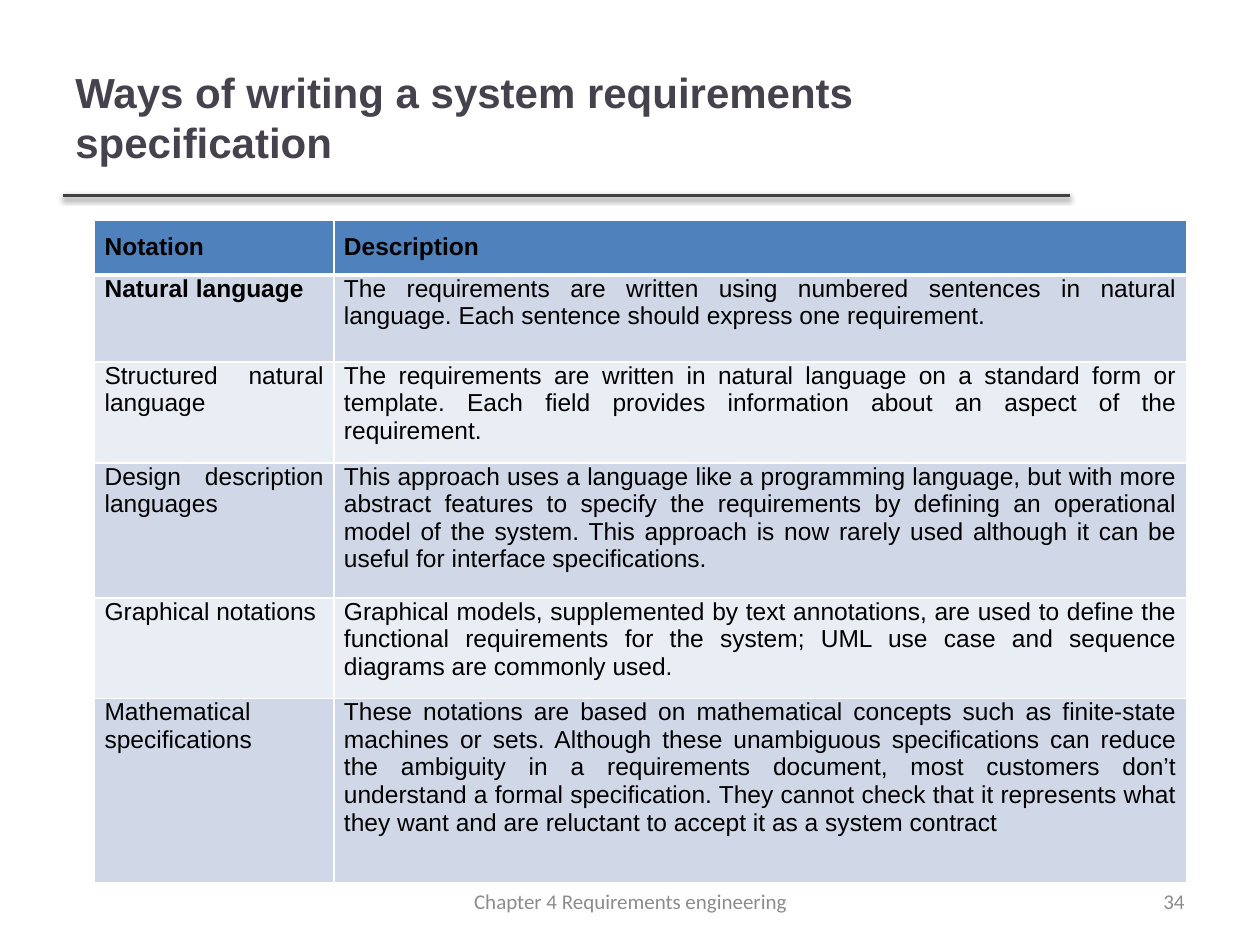
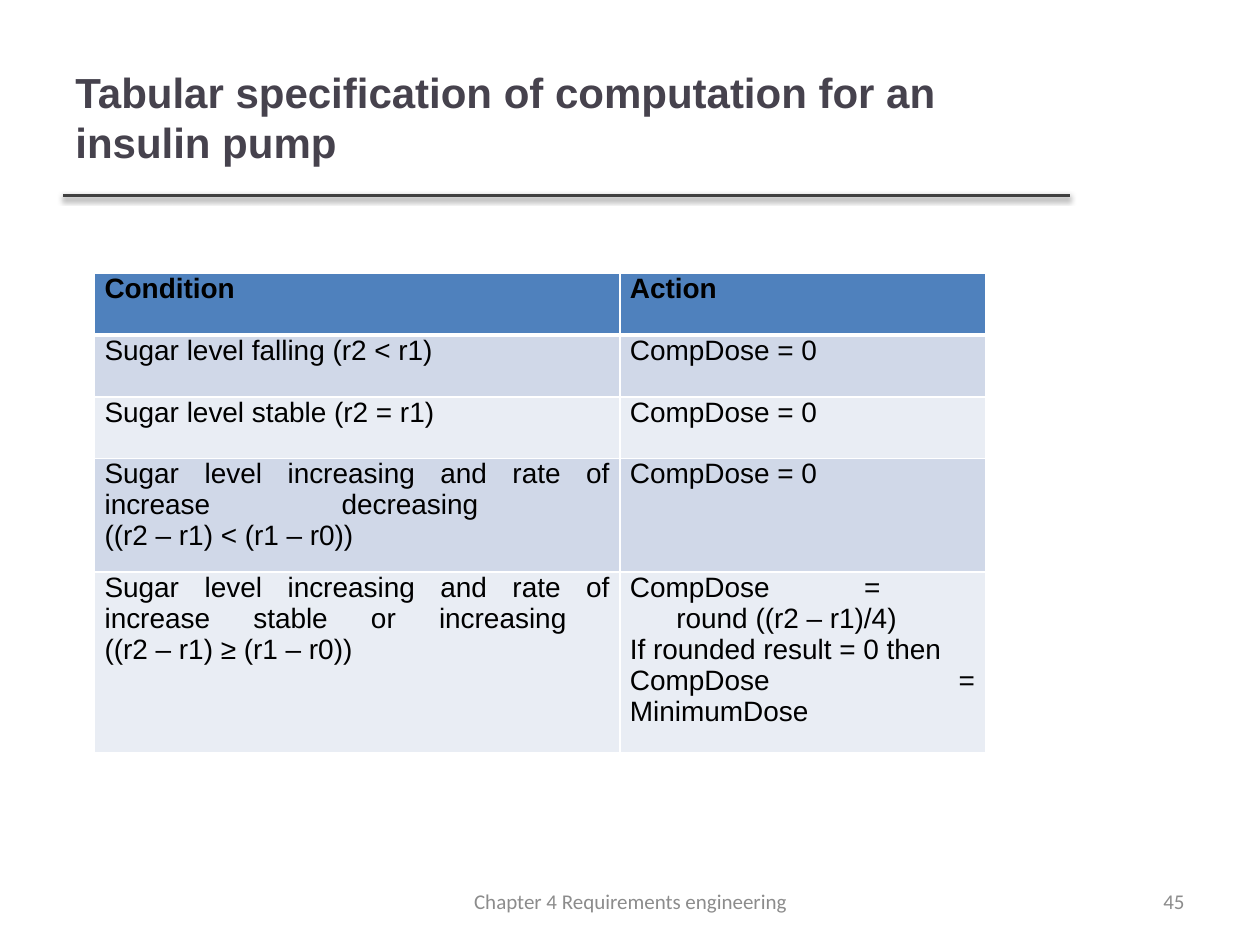
from lxml import etree
from pptx import Presentation
from pptx.dml.color import RGBColor
from pptx.enum import shapes, text as styles
from pptx.oxml import ns, parse_xml
from pptx.util import Inches, Pt

TITLE_INK = RGBColor(0x46, 0x42, 0x4D)
RULE_INK = RGBColor(0x40, 0x40, 0x40)
FOOTER_INK = RGBColor(0x8C, 0x8C, 0x8C)
BLACK = RGBColor(0, 0, 0)
HEADER_FILL = RGBColor(0x4F, 0x81, 0xBD)
BAND_FILLS = [RGBColor(0xE9, 0xED, 0xF4), RGBColor(0xD0, 0xD8, 0xE8)]

LEFT = styles.PP_ALIGN.LEFT
CENTER = styles.PP_ALIGN.CENTER
RIGHT = styles.PP_ALIGN.RIGHT
JUSTIFY = styles.PP_ALIGN.JUSTIFY

FOOTER = "Chapter 4 Requirements engineering"
SHADOW = (
    f'<a:effectLst {ns.nsdecls("a")}>'
    '<a:outerShdw blurRad="39370" dist="20320" dir="5400000" rotWithShape="0">'
    '<a:srgbClr val="000000"><a:alpha val="38000"/></a:srgbClr>'
    '</a:outerShdw></a:effectLst>'
)

PAGES = [
    dict(
        title="Ways of writing a system requirements specification",
        number="34",
        top=1.75,
        size=14,
        header_inset=0.1,
        bold_cells=[(1, 0)],
        columns=[1.9, 6.77],
        heights=[0.4, 0.69, 0.76, 1.07, 0.76, 1.46],
        rows=[
            ("Notation", "Description"),
            ("Natural language",
             "The requirements are written using numbered sentences in natural "
             "language. Each sentence should express one requirement."),
            ("Structured natural language",
             "The requirements are written in natural language on a standard form "
             "or template. Each field provides information about an aspect of the "
             "requirement."),
            ("Design description languages",
             "This approach uses a language like a programming language, but with "
             "more abstract features to specify the requirements by defining an "
             "operational model of the system. This approach is now rarely used "
             "although it can be useful for interface specifications."),
            ("Graphical notations",
             "Graphical models, supplemented by text annotations, are used to "
             "define the functional requirements for the system; UML use case and "
             "sequence diagrams are commonly used."),
            ("Mathematical specifications",
             "These notations are based on mathematical concepts such as "
             "finite-state machines or sets. Although these unambiguous "
             "specifications can reduce the ambiguity in a requirements document, "
             "most customers don’t understand a formal specification. They cannot "
             "check that it represents what they want and are reluctant to accept "
             "it as a system contract"),
        ],
    ),
    dict(
        title="Tabular specification of computation for an insulin pump",
        number="45",
        top=2.17,
        size=16,
        header_inset=0,
        bold_cells=[],
        columns=[4.17, 2.9],
        heights=[0.49, 0.49, 0.49, 0.84, 1.33],
        rows=[
            ("Condition", "Action"),
            ("Sugar level falling (r2 < r1)", "CompDose = 0"),
            ("Sugar level stable (r2 = r1)", "CompDose = 0"),
            ("Sugar level increasing and rate of increase decreasing \v"
             "((r2 – r1) < (r1 – r0))", "CompDose = 0"),
            ("Sugar level increasing and rate of increase stable or increasing \v"
             "((r2 – r1) ≥ (r1 – r0))",
             "CompDose = \v      round ((r2 – r1)/4)\n"
             "If rounded result = 0 then\n"
             "CompDose = MinimumDose"),
        ],
    ),
]


def write(frame, text, size, color, font="Arial", bold=False, align=LEFT):
    frame.word_wrap = True
    frame.text = text
    for para in frame.paragraphs:
        para.alignment = align
        for span in para.runs:
            span.font.name = font
            span.font.size = Pt(size)
            span.font.bold = bold
            span.font.color.rgb = color


def set_borders(cell, top, bottom):
    properties = cell._tc.get_or_add_tcPr()
    sides = [("lnL", 1), ("lnR", 1), ("lnT", top), ("lnB", bottom)]
    for index, (side, width) in enumerate(sides):
        border = etree.Element(ns.qn(f"a:{side}"), w=str(Pt(width)))
        fill = etree.SubElement(border, ns.qn("a:solidFill"))
        etree.SubElement(fill, ns.qn("a:srgbClr"), val="FFFFFF")
        properties.insert(index, border)


deck = Presentation()
deck.slide_width = Inches(10)
deck.slide_height = Inches(7.5)

for content in PAGES:
    page = deck.slides.add_slide(deck.slide_layouts[6])

    rule = page.shapes.add_connector(
        shapes.MSO_CONNECTOR.STRAIGHT,
        Inches(0.5), Inches(1.55), Inches(8.49), Inches(1.55))
    rule.line.color.rgb = RULE_INK
    rule.line.width = Pt(2)
    rule._element.spPr.append(parse_xml(SHADOW))

    labels = [
        (content["title"], (0.5, 0.3, 7.98, 1.25),
         dict(size=24, color=TITLE_INK, bold=True)),
        (content["number"], (7.17, 6.95, 2.33, 0.4),
         dict(size=12, color=FOOTER_INK, font="Calibri", align=RIGHT)),
        (FOOTER, (3.42, 6.95, 3.17, 0.4),
         dict(size=12, color=FOOTER_INK, font="Calibri", align=CENTER)),
    ]
    for label, place, style in labels:
        box = page.shapes.add_textbox(*map(Inches, place))
        box.text_frame.vertical_anchor = styles.MSO_ANCHOR.MIDDLE
        write(box.text_frame, label, **style)

    columns, heights, rows = content["columns"], content["heights"], content["rows"]
    table = page.shapes.add_table(
        len(rows), len(columns), Inches(0.75), Inches(content["top"]),
        Inches(sum(columns)), Inches(sum(heights))).table
    for column, width in zip(table.columns, columns):
        column.width = Inches(width)
    for row, height in zip(table.rows, heights):
        row.height = Inches(height)

    for r, row in enumerate(rows):
        for c, entry in enumerate(row):
            cell = table.cell(r, c)
            cell.margin_left = cell.margin_right = Inches(0.08)
            cell.margin_top = Inches(content["header_inset"] if r == 0 else 0)
            cell.margin_bottom = Inches(0.1)
            cell.fill.solid()
            cell.fill.fore_color.rgb = HEADER_FILL if r == 0 else BAND_FILLS[r % 2]
            set_borders(cell, top=3 if r == 1 else 1, bottom=3 if r == 0 else 1)
            write(cell.text_frame, entry, content["size"], BLACK, align=JUSTIFY,
                  bold=r == 0 or (r, c) in content["bold_cells"])

deck.save("out.pptx")
